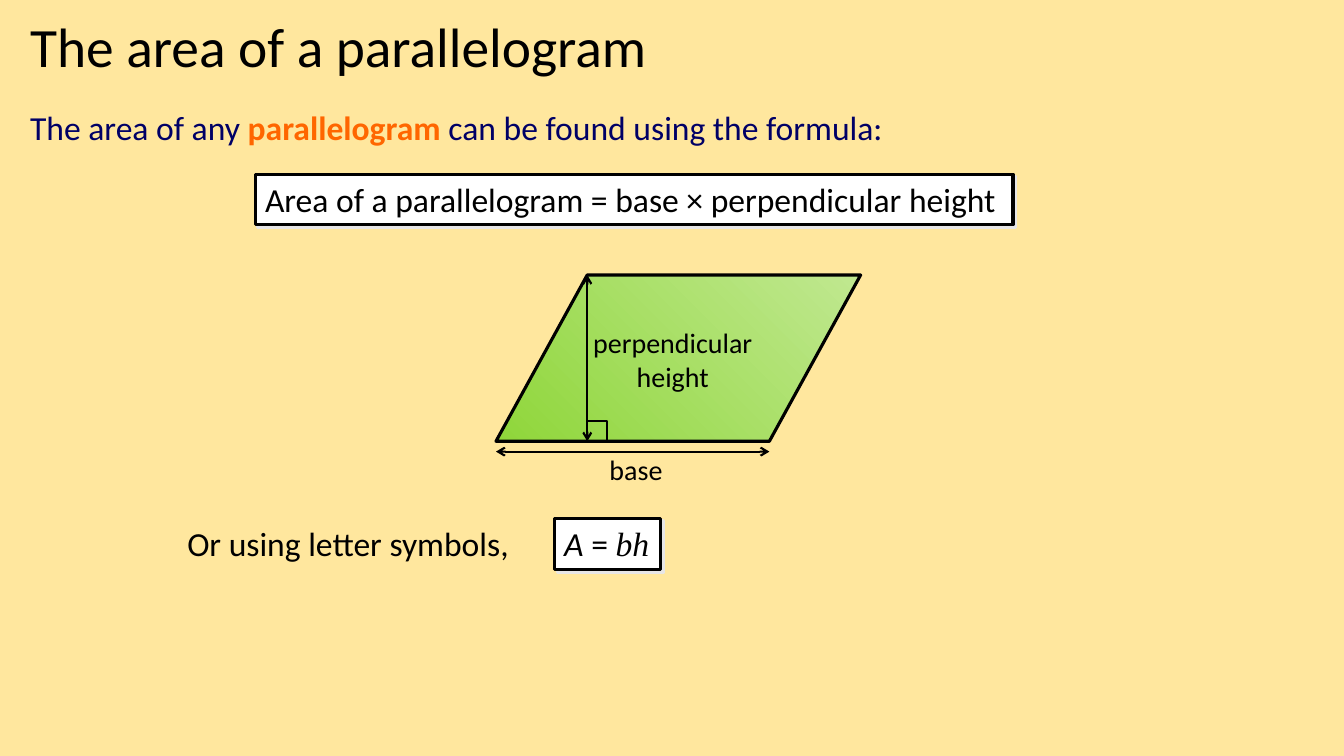
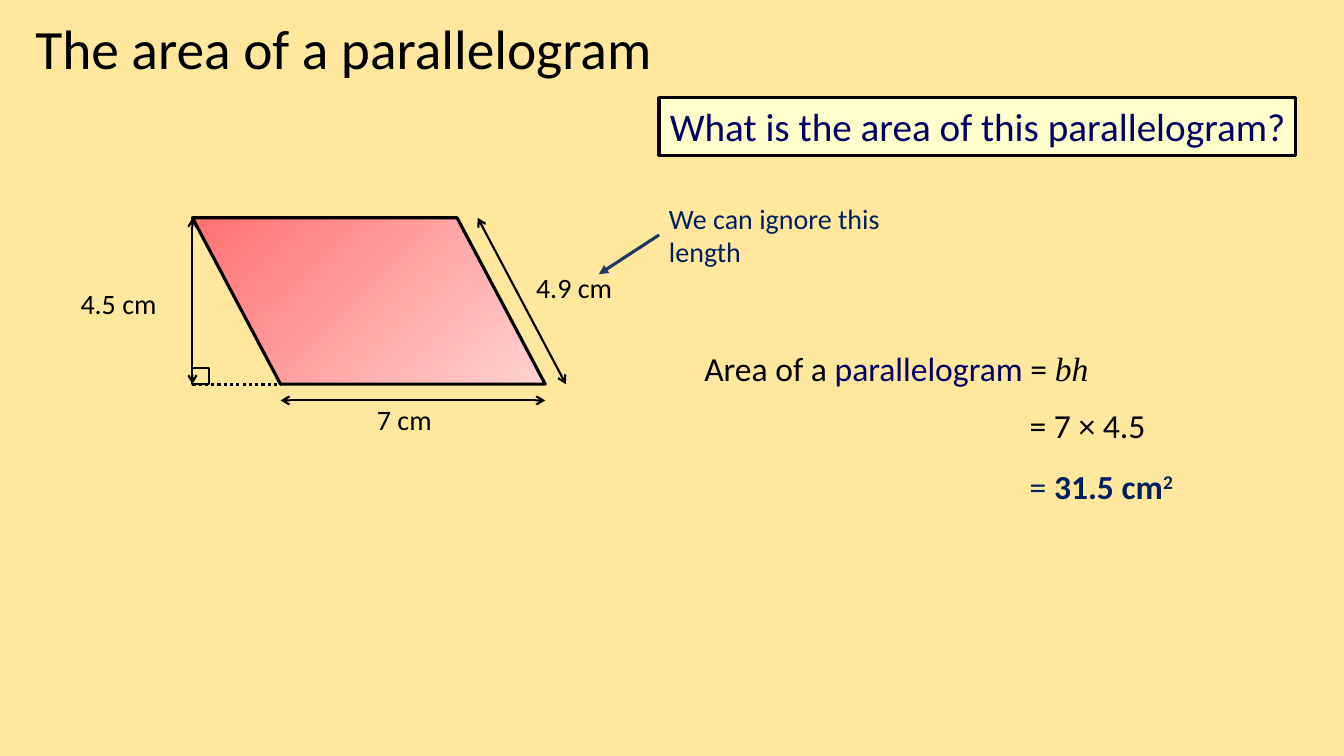
from dataclasses import dataclass
from typing import Optional

from lxml.etree import SubElement
from pptx import Presentation
from pptx.dml.color import RGBColor
from pptx.enum.dml import MSO_LINE
from pptx.enum.shapes import MSO_CONNECTOR as Connector, MSO_SHAPE as Preset
from pptx.enum.text import MSO_ANCHOR as Anchor, MSO_AUTO_SIZE as AutoSize, PP_ALIGN as Align
from pptx.oxml.ns import qn
from pptx.util import Cm, Pt


@dataclass(frozen=True)
class Theme:
    background: str = "FFE79E"
    ink: str = "000000"
    navy: str = "000066"
    answer: str = "002060"
    pointer: str = "203864"
    accent: str = "FF6600"
    paper: str = "FFFFFF"
    cream: str = "FFFFCC"
    shadow: str = "E7E6E6"
    green: tuple = ("8FD63A", "C0E890")
    red: tuple = ("FF7171", "FFD2D2")
    font: str = "Calibri"
    math_font: str = "Times New Roman"
    title_size: float = 39.6
    question_size: float = 28
    body_size: float = 24
    label_size: float = 20
    outline: float = 2.25
    thin: float = 1.5


THEME = Theme()
TITLE = "The area of a parallelogram"


@dataclass(frozen=True)
class Span:
    """A stretch of text with its own look."""
    text: str
    color: str = THEME.ink
    font: str = THEME.font
    bold: bool = False
    italic: bool = False
    superscript: bool = False


@dataclass(frozen=True)
class Parallelogram:
    """Geometry in centimetres; slant is the sideways shift of the top edge."""
    left: float
    top: float
    width: float
    height: float
    slant: float

    @property
    def base(self):
        return self.width - self.slant

    @property
    def right(self):
        return self.left + self.width

    @property
    def bottom(self):
        return self.top + self.height


BH = Span("bh", font=THEME.math_font, italic=True)


def rgb(value):
    return RGBColor.from_string(value)


# Text
def write(shape, spans, size, align=Align.LEFT, wrap=False):
    frame = shape.text_frame
    frame.word_wrap = wrap
    frame.auto_size = AutoSize.SHAPE_TO_FIT_TEXT
    frame.vertical_anchor = Anchor.TOP
    paragraph = frame.paragraphs[0]
    paragraph.alignment = align
    for span in [Span(spans)] if isinstance(spans, str) else spans:
        run = paragraph.add_run()
        run.text = span.text
        font = run.font
        font.name, font.size = span.font, Pt(size)
        font.bold, font.italic = span.bold, span.italic
        font.color.rgb = rgb(span.color)
        if span.superscript:
            font._element.set("baseline", "30000")


def add_text(slide, box, spans, size=THEME.body_size, **layout):
    shape = slide.shapes.add_textbox(*map(Cm, box))
    write(shape, spans, size, **layout)
    return shape


def add_title(slide, left, top):
    shape = add_text(slide, (left, top, 22.86, 1.7), TITLE, THEME.title_size, wrap=True)
    shape.text_frame.auto_size = AutoSize.NONE
    shape.text_frame.vertical_anchor = Anchor.MIDDLE
    shape.text_frame.paragraphs[0].line_spacing = 0.9


# Shapes
def add_outlined(slide, preset, box, fill: Optional[str] = None, width=THEME.outline):
    shape = slide.shapes.add_shape(preset, *map(Cm, box))
    shape.shadow.inherit = False
    if fill:
        shape.fill.solid()
        shape.fill.fore_color.rgb = rgb(fill)
    else:
        shape.fill.background()
    shape.line.color.rgb = rgb(THEME.ink)
    shape.line.width = Pt(width)
    return shape


def add_formula_box(slide, box, spans):
    shape = add_outlined(slide, Preset.RECTANGLE, box, THEME.paper)
    write(shape, spans, THEME.body_size)
    effects = shape._element.spPr.find(qn("a:effectLst"))
    shadow = SubElement(effects, qn("a:outerShdw"), dist=str(Pt(2.8)),
                        dir="2700000", algn="ctr", rotWithShape="0")
    SubElement(shadow, qn("a:srgbClr"), val=THEME.shadow)


def add_parallelogram(slide, figure, colors, flipped=False):
    box = (figure.left, figure.top, figure.width, figure.height)
    shape = add_outlined(slide, Preset.PARALLELOGRAM, box)
    shape.adjustments[0] = figure.slant / figure.height
    shape.fill.gradient()
    shape.fill.gradient_angle = 45
    for stop, color in zip(shape.fill.gradient_stops, colors):
        stop.color.rgb = rgb(color)
    if flipped:
        shape._element.spPr.find(qn("a:xfrm")).set("flipV", "1")


def add_right_angle(slide, left, bottom, side):
    add_outlined(slide, Preset.RECTANGLE, (left, bottom - side, side, side), width=THEME.thin)


# Lines
def add_line(slide, start, end, color=THEME.ink, width=THEME.outline,
             head=None, tail=None, dash=None):
    connector = slide.shapes.add_connector(Connector.STRAIGHT, *map(Cm, (*start, *end)))
    line = connector.line
    line.color.rgb = rgb(color)
    line.width = Pt(width)
    if dash:
        line.dash_style = dash
    properties = connector._element.spPr
    for tag, kind in (("a:headEnd", head), ("a:tailEnd", tail)):
        if kind:
            SubElement(properties.find(qn("a:ln")), qn(tag), type=kind)
    SubElement(properties, qn("a:effectLst"))


def add_dimension(slide, start, end):
    add_line(slide, start, end, width=THEME.thin, head="arrow", tail="arrow")


def add_slide(presentation, title_left, title_top):
    slide = presentation.slides.add_slide(presentation.slide_layouts[6])
    slide.background.fill.solid()
    slide.background.fill.fore_color.rgb = rgb(THEME.background)
    add_title(slide, title_left, title_top)
    return slide


# Slides
def build_formula_slide(presentation):
    slide = add_slide(presentation, 0.51, 0.41)
    add_text(slide, (0.51, 2.57, 24, 1.27), [
        Span("The area of any ", THEME.navy),
        Span("parallelogram", THEME.accent, bold=True),
        Span(" can be found using the formula:", THEME.navy)], wrap=True)
    add_formula_box(slide, (6.43, 4.39, 19.1, 1.27),
                    "Area of a parallelogram = base × perpendicular height")

    # Labelled figure
    figure = Parallelogram(12.5, 6.93, 9.19, 4.19, 2.3)
    foot = figure.left + figure.slant
    base_y = figure.bottom + 0.26
    add_parallelogram(slide, figure, THEME.green)
    add_dimension(slide, (figure.left, base_y), (figure.left + figure.base, base_y))
    add_dimension(slide, (foot, figure.top), (foot, figure.bottom))
    add_right_angle(slide, foot, figure.bottom, 0.51)
    add_text(slide, (15.11, 11.28, 1.85, 1.12), "base", THEME.label_size)
    add_text(slide, (14.07, 8.08, 5.77, 1.96), "perpendicular height",
             THEME.label_size, align=Align.CENTER, wrap=True)

    # Formula in letters
    add_text(slide, (4.47, 13.06, 8.71, 1.3), "Or using letter symbols,")
    add_formula_box(slide, (13.97, 13.06, 2.67, 1.3),
                    [Span("A", italic=True), Span(" = "), BH])


def build_example_slide(presentation):
    slide = add_slide(presentation, 0.64, 0.46)
    question = add_outlined(slide, Preset.RECTANGLE, (16.61, 2.46, 16.05, 1.45), THEME.cream)
    write(question, [Span("What is the area of this parallelogram?", THEME.navy)],
          THEME.question_size, align=Align.CENTER, wrap=True)

    # Figure with its measurements
    figure = Parallelogram(4.85, 5.49, 8.89, 4.19, 2.22)
    corner = (figure.left, figure.bottom)
    base_left = figure.left + figure.slant
    base_y = figure.bottom + 0.41
    side_gap = 0.52
    add_line(slide, corner, (base_left, figure.bottom), dash=MSO_LINE.ROUND_DOT)
    add_right_angle(slide, *corner, 0.41)
    add_dimension(slide, (figure.left, figure.top), corner)
    add_dimension(slide, (base_left, base_y), (figure.right, base_y))
    add_parallelogram(slide, figure, THEME.red, flipped=True)
    add_dimension(slide, (figure.left + figure.base + side_gap, figure.top),
                  (figure.right + side_gap, figure.bottom))
    for text, left, top, width in (("7 cm", 9.25, 10.03, 1.9),
                                   ("4.5 cm", 1.78, 7.09, 2.44),
                                   ("4.9 cm", 13.26, 6.68, 2.44)):
        add_text(slide, (left, top, width, 1.12), text, THEME.label_size)

    # Hint
    add_text(slide, (16.61, 4.95, 6.05, 1.96),
             [Span("We can ignore this length", THEME.answer)], THEME.label_size, wrap=True)
    add_line(slide, (16.61, 5.92), (15.09, 6.91), THEME.pointer, tail="triangle")

    # Working
    add_text(slide, (17.5, 8.64, 10.29, 1.27), [
        Span("Area of a "), Span("parallelogram", THEME.navy), Span(" = "), BH])
    add_text(slide, (25.7, 10.08, 3.45, 1.27), "= 7 × 4.5")
    add_text(slide, (25.7, 11.61, 4.19, 1.27), [
        Span("= ", THEME.answer),
        Span("31.5 cm", THEME.answer, bold=True),
        Span("2", THEME.answer, bold=True, superscript=True)])


def main():
    presentation = Presentation()
    presentation.slide_width, presentation.slide_height = Cm(33.87), Cm(19.05)
    build_formula_slide(presentation)
    build_example_slide(presentation)
    presentation.save("out.pptx")


if __name__ == "__main__":
    main()
